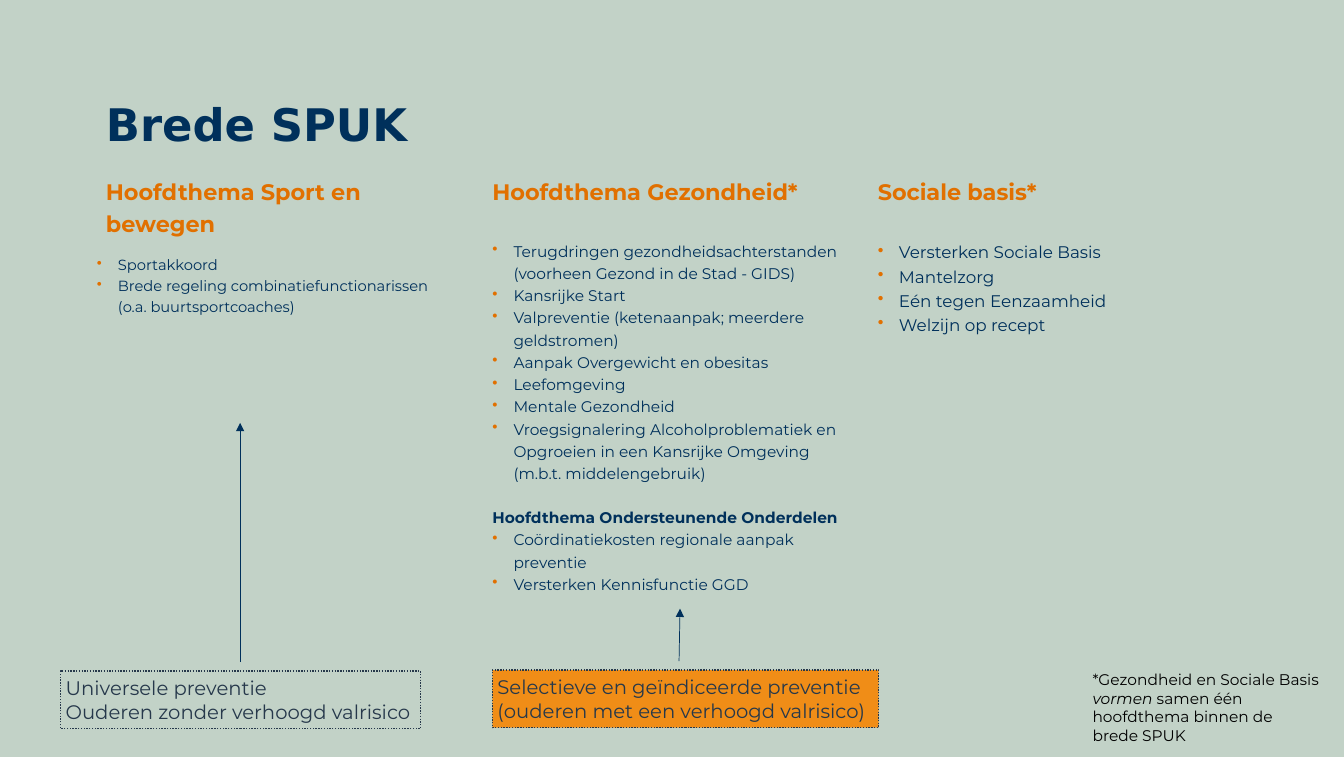
from lxml import etree
from pptx import Presentation
from pptx.dml.color import RGBColor
from pptx.enum import dml, shapes, text
from pptx.oxml.ns import qn
from pptx.util import Inches, Pt

THEME = {
    "background": RGBColor.from_string("C2D2C7"),
    "navy": RGBColor.from_string("00305B"),
    "orange": RGBColor.from_string("E17000"),
    "amber": RGBColor.from_string("F08D17"),
    "slate": RGBColor.from_string("26384B"),
    "black": RGBColor.from_string("000000"),
    "title": Pt(32),
    "heading": Pt(16),
    "box": Pt(14),
    "note": Pt(11),
    "body_font": "Montserrat",
    "title_font": "DejaVu Sans",
}

prs = Presentation()
prs.slide_width, prs.slide_height = Inches(13.32), Inches(7.5)
s = prs.slides.add_slide(prs.slide_layouts[6])
s.background.fill.solid()
s.background.fill.fore_color.rgb = THEME["background"]


def add_text(p, words, size, color, **formats):
    r = p.add_run()
    r.text = words
    r.font.color.rgb = THEME[color]
    for name, value in {"name": THEME["body_font"], "size": size, **formats}.items():
        setattr(r.font, name, value)


def add_frame(left, top, width, height, inset=0):
    tf = s.shapes.add_textbox(*map(Inches, (left, top, width, height))).text_frame
    tf.word_wrap = True
    if inset is not None:
        for side in ("left", "top", "right", "bottom"):
            setattr(tf, f"margin_{side}", Inches(inset))
    return tf


tf = add_frame(1.05, 0.23, 11.22, 1.26)
tf.vertical_anchor = text.MSO_ANCHOR.BOTTOM
add_text(tf.paragraphs[0], "Brede SPUK", THEME["title"], "navy",
         name=THEME["title_font"], bold=True)

SUBHEADING = "Hoofdthema Ondersteunende Onderdelen"
columns = [
    ("Hoofdthema Sport en bewegen", 1.05, (0.96, 2.5, 3.57, 2.8), 10.5, [
        "Sportakkoord",
        "Brede regeling combinatiefunctionarissen (o.a. buurtsportcoaches)",
    ]),
    ("Hoofdthema Gezondheid*", 4.88, (4.88, 2.36, 3.57, 4.28), 11, [
        "Terugdringen gezondheidsachterstanden (voorheen Gezond in de Stad - GIDS)",
        "Kansrijke Start",
        "Valpreventie (ketenaanpak; meerdere geldstromen)",
        "Aanpak Overgewicht en obesitas",
        "Leefomgeving",
        "Mentale Gezondheid",
        "Vroegsignalering Alcoholproblematiek en Opgroeien in een Kansrijke "
        "Omgeving (m.b.t. middelengebruik)",
        SUBHEADING,
        "Coördinatiekosten regionale aanpak preventie",
        "Versterken Kennisfunctie GGD",
    ]),
    ("Sociale basis*", 8.7, (8.7, 2.36, 3.57, 3.86), 12, [
        "Versterken Sociale Basis",
        "Mantelzorg",
        "Eén tegen Eenzaamheid",
        "Welzijn op recept",
    ]),
]

for heading, left, place, size, items in columns:
    p = add_frame(left, 1.71, 3.57, 0.37).paragraphs[0]
    p.line_spacing = 1.2
    add_text(p, heading, THEME["heading"], "orange", bold=True)

    tf = add_frame(*place)
    for i, item in enumerate(items):
        p = tf.paragraphs[0] if i == 0 else tf.add_paragraph()
        p.line_spacing = 1.2
        if item == SUBHEADING:
            p.space_before = Pt(15.8)
        else:
            pPr = p._p.get_or_add_pPr()
            pPr.set("marL", str(Inches(0.21)))
            pPr.set("indent", str(-Inches(0.21)))
            bullet_color = etree.SubElement(pPr, qn("a:buClr"))
            etree.SubElement(bullet_color, qn("a:srgbClr"), val=str(THEME["orange"]))
            etree.SubElement(pPr, qn("a:buChar"), char="•")
        add_text(p, item, Pt(size), "navy", bold=item == SUBHEADING)

p = add_frame(10.73, 6.59, 2.47, 0.84, None).paragraphs[0]
for words, italic in [
    ("*Gezondheid en Sociale Basis ", False),
    ("vormen", True),
    (" samen één hoofdthema binnen de brede SPUK", False),
]:
    add_text(p, words, THEME["note"], "black", italic=italic)

prevention_boxes = [
    ((0.6, 6.65, 3.57, 0.57), None,
     ["Universele preventie", "Ouderen zonder verhoogd valrisico"]),
    ((4.88, 6.64, 3.83, 0.57), "amber",
     ["Selectieve en geïndiceerde preventie", "(ouderen met een verhoogd valrisico)"]),
]
for place, fill, lines in prevention_boxes:
    sp = s.shapes.add_shape(shapes.MSO_SHAPE.RECTANGLE, *map(Inches, place))
    sp.shadow.inherit = False
    if fill:
        sp.fill.solid()
        sp.fill.fore_color.rgb = THEME[fill]
    else:
        sp.fill.background()
    sp.line.color.rgb = THEME["slate"]
    sp.line.width = Pt(1)
    sp.line.dash_style = dml.MSO_LINE.ROUND_DOT
    tf = sp.text_frame
    tf.word_wrap = True
    tf.vertical_anchor = text.MSO_ANCHOR.TOP
    for side in ("left", "top", "right", "bottom"):
        setattr(tf, f"margin_{side}", Inches(0.05))
    for i, words in enumerate(lines):
        p = tf.paragraphs[0] if i == 0 else tf.add_paragraph()
        p.alignment = text.PP_ALIGN.LEFT
        add_text(p, words, THEME["box"], "slate")

for ends in [(2.38, 6.56, 2.38, 4.19), (6.73, 6.55, 6.74, 6.03)]:
    arrow = s.shapes.add_connector(shapes.MSO_CONNECTOR.STRAIGHT, *map(Inches, ends))
    arrow.line.color.rgb = THEME["navy"]
    arrow.line.width = Pt(0.5)
    etree.SubElement(arrow.line._get_or_add_ln(), qn("a:tailEnd"), type="triangle")
    etree.SubElement(arrow._element.spPr, qn("a:effectLst"))

prs.save("out.pptx")
